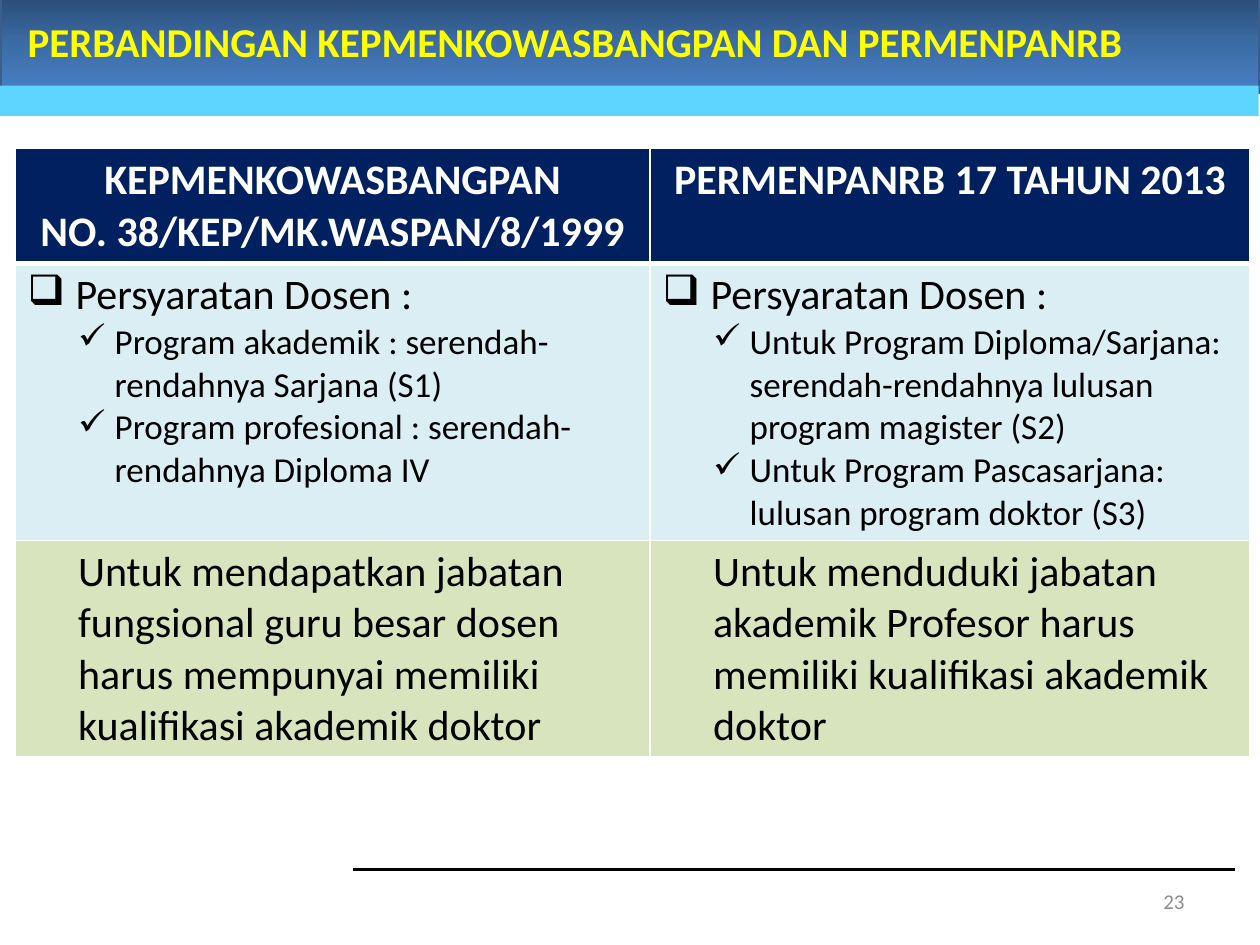
from copy import deepcopy

from lxml import etree
from pptx import Presentation
from pptx import util as u
from pptx.dml.color import RGBColor
from pptx.enum import shapes, text
from pptx.oxml import ns

FONT = "Calibri"
BULLETS = {"box": ("❑", 0.38, -0.38, 24), "check": ("✓", 0.69, -0.29, 20),
           "plain": (None, 0.4, 0, 24)}


def rgb(value):
    return RGBColor.from_string(value)


def sub(parent, tag, **attrs):
    return etree.SubElement(parent, ns.qn(tag), attrs)


class SlideBuilder:
    def __init__(self, slide):
        self.s = slide

    def font(self, p, size, color, bold=False):
        for r in p.runs:
            r.font.name, r.font.size, r.font.bold = FONT, u.Pt(size), bold
            r.font.color.rgb = rgb(color)

    def bar(self, box, fill, line=None):
        """Rectangle; a list of fill colours makes a top-to-bottom gradient."""
        sp = self.s.shapes.add_shape(shapes.MSO_SHAPE.RECTANGLE, *map(u.Inches, box))
        sp.shadow.inherit = False
        if isinstance(fill, list):
            sp.fill.gradient()
            sp.fill.gradient_angle = 270
            stop_list = sp.fill._fill._gradFill.gsLst
            stop_list.insert(1, deepcopy(stop_list[0]))
            for i, (stop, color) in enumerate(zip(sp.fill.gradient_stops, fill)):
                stop.position = i / (len(fill) - 1)
                stop.color.rgb = rgb(color)
        else:
            sp.fill.solid()
            sp.fill.fore_color.rgb = rgb(fill)
        if line:
            sp.line.color.rgb = rgb(line)
            sp.line.width = u.Pt(2)
        else:
            sp.line.fill.background()

    def rule(self, x1, x2, y, color, width):
        ends = map(u.Inches, (x1, y, x2, y))
        c = self.s.shapes.add_connector(shapes.MSO_CONNECTOR.STRAIGHT, *ends)
        c.line.color.rgb = rgb(color)
        c.line.width = u.Pt(width)
        sub(c._element.spPr, "a:effectLst")

    def label(self, box, content, size, color, bold=False, align=text.PP_ALIGN.LEFT):
        tf = self.s.shapes.add_textbox(*map(u.Inches, box)).text_frame
        tf.word_wrap = True
        tf.vertical_anchor = text.MSO_ANCHOR.MIDDLE
        tf.text = content
        p = tf.paragraphs[0]
        p.alignment = align
        self.font(p, size, color, bold)

    def borders(self, cell, bottom):
        tc_pr = cell._tc.get_or_add_tcPr()
        for i, side in enumerate("LRTB"):
            width = bottom if side == "B" else 1
            ln = etree.Element(ns.qn(f"a:ln{side}"), w=str(u.Pt(width)))
            sub(sub(ln, "a:solidFill"), "a:srgbClr", val="FFFFFF")
            tc_pr.insert(i, ln)

    def indent(self, p, kind):
        char, left, hang, size = BULLETS[kind]
        p.level = 0 if kind == "box" else 1
        p_pr = p._p.get_or_add_pPr()
        p_pr.set("marL", str(u.Inches(left)))
        p_pr.set("indent", str(u.Inches(hang)))
        if char:
            sub(p_pr, "a:buChar", char=char)
        self.font(p, size, "000000")

    def table(self, box, widths, heights, fills, rows):
        """Cells are lists of (kind, wording); the kind "head" is a heading."""
        size = len(heights), len(widths)
        t = self.s.shapes.add_table(*size, *map(u.Inches, box)).table
        for col, width in zip(t.columns, widths):
            col.width = u.Inches(width)
        for i, row in enumerate(rows):
            t.rows[i].height = u.Inches(heights[i])
            for j, items in enumerate(row):
                cell = t.cell(i, j)
                cell.fill.solid()
                cell.fill.fore_color.rgb = rgb(fills[i])
                self.borders(cell, 3 if i == 0 else 1)
                cell.text_frame.text = "\n".join(wording for _, wording in items)
                for p, (kind, _) in zip(cell.text_frame.paragraphs, items):
                    if kind == "head":
                        p.alignment = text.PP_ALIGN.CENTER
                        self.font(p, 24, "FFFFFF", True)
                    else:
                        self.indent(p, kind)


def main():
    prs = Presentation()
    prs.slide_width, prs.slide_height = u.Inches(10), u.Inches(7.5)
    b = SlideBuilder(prs.slides.add_slide(prs.slide_layouts[6]))

    # Title band and footer rule
    b.bar((0, -0.03, 10, 0.76), ["2A4C75", "3C6CA6", "4780C5"], "3A5F8C")
    b.bar((-0.02, 0.68, 10.01, 0.24), "5DD5FF")
    b.rule(2.8, 9.8, 6.9, "000000", 1.75)
    b.label((0.12, -0.03, 9.45, 0.72),
            "PERBANDINGAN KEPMENKOWASBANGPAN DAN PERMENPANRB", 23.4, "FFFF00", True)

    # Comparison of the two regulations
    rows = [
        [[("head", "KEPMENKOWASBANGPAN"), ("head", "NO. 38/KEP/MK.WASPAN/8/1999")],
         [("head", "PERMENPANRB 17 TAHUN 2013")]],
        [[("box", "Persyaratan Dosen :"),
          ("check", "Program akademik : serendah-rendahnya Sarjana (S1)"),
          ("check", "Program profesional : serendah-rendahnya Diploma IV")],
         [("box", "Persyaratan Dosen :"),
          ("check", "Untuk Program Diploma/Sarjana: serendah-rendahnya lulusan "
                    "program magister (S2)"),
          ("check", "Untuk Program Pascasarjana: lulusan program doktor (S3)")]],
        [[("plain", "Untuk mendapatkan jabatan fungsional guru besar dosen harus "
                    "mempunyai memiliki kualifikasi akademik doktor")],
         [("plain", "Untuk menduduki jabatan akademik Profesor harus memiliki "
                    "kualifikasi akademik doktor")]],
    ]
    b.table((0.12, 1.18, 9.8, 4.83), [5.04, 4.76], [0.91, 2.2, 1.72],
            ["002060", "DBEEF4", "D7E4BD"], rows)

    # Page number
    b.label((7.17, 6.95, 2.33, 0.4), "23", 12, "8C8C8C", align=text.PP_ALIGN.RIGHT)

    prs.save("out.pptx")


if __name__ == "__main__":
    main()
